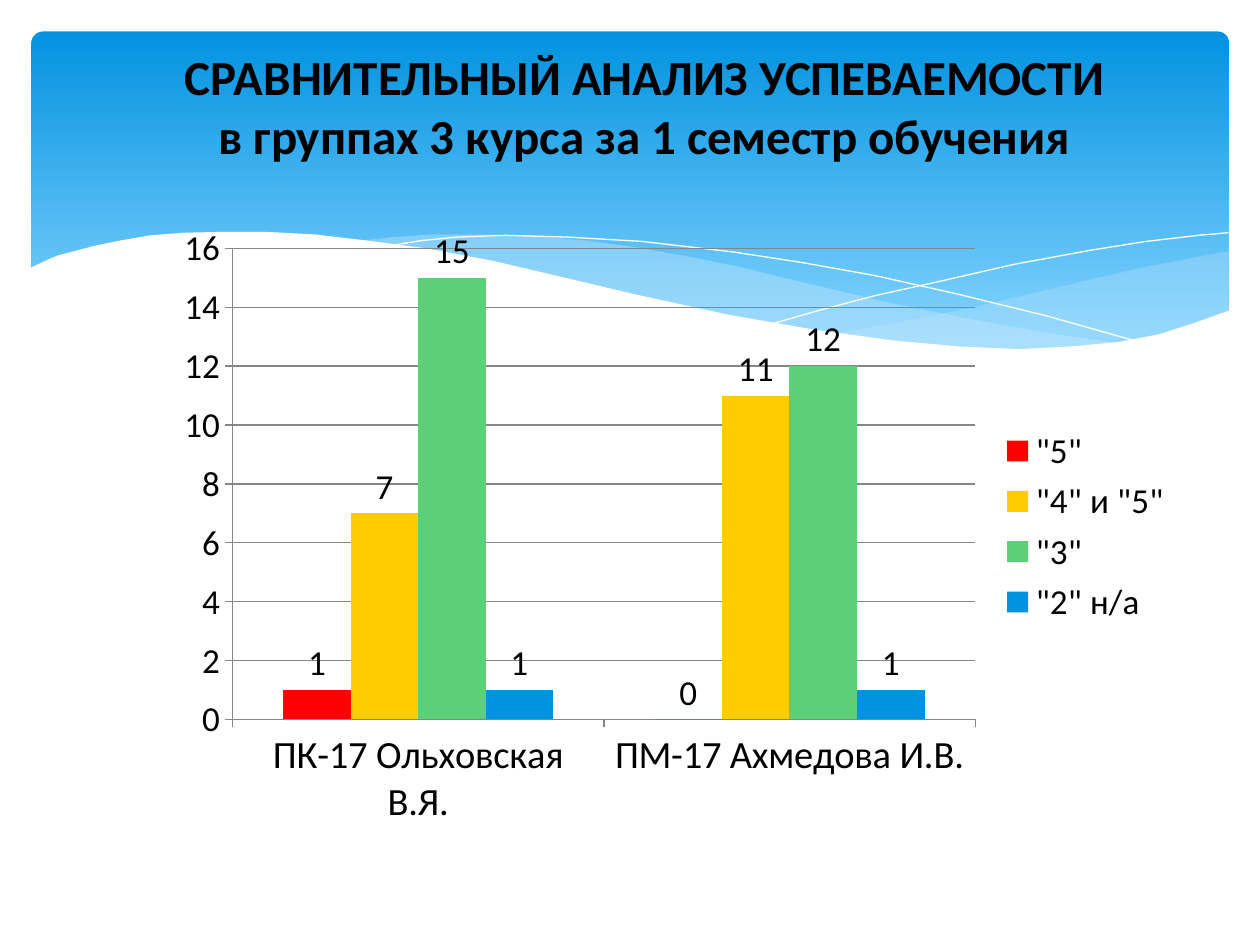
from pptx import Presentation
from pptx.chart.data import CategoryChartData
from pptx.dml.color import RGBColor
from pptx.enum.chart import (XL_CHART_TYPE as CT, XL_LABEL_POSITION as LabelPos,
                             XL_LEGEND_POSITION as LegendPos, XL_TICK_MARK as Tick)
from pptx.enum.shapes import MSO_SHAPE as Shape
from pptx.enum.text import MSO_ANCHOR as Anchor, PP_ALIGN as Align
from pptx.oxml.ns import qn
from pptx.util import Pt
from lxml.etree import SubElement

COLORS = {
    "top": "0293E0", "bottom": "83D3FE", "swell": "C6E7FC", "white": "FFFFFF",
    "text": "000000", "grid": "868686", "red": "FF0000", "yellow": "FFCC00",
    "green": "5BD078", "blue": "0293E0",
}
FONT = "Calibri"
TITLE = "СРАВНИТЕЛЬНЫЙ АНАЛИЗ УСПЕВАЕМОСТИ\vв группах 3 курса за 1 семестр обучения"
GROUPS = ["ПК-17 Ольховская В.Я.", "ПМ-17 Ахмедова И.В."]
GRADES = [
    ('"5"', (1, 0), "red"),
    ('"4" и "5"', (7, 11), "yellow"),
    ('"3"', (15, 12), "green"),
    ('"2" н/а', (1, 1), "blue"),
]

RIGHT_SWELL = [
    (702, 143.5), (652, 153), (620, 160.5), (561, 174.5), (525, 182), (476, 191),
    (508, 195.5), (536, 198), (562, 199.5), (594, 200), (622, 199), (652, 195),
    (678, 189), (702, 178),
]
MIDDLE_SWELL = [
    (643, 196.5), (603, 191), (558, 183), (508, 173), (453, 160), (420, 152),
    (390, 146), (361, 141), (335, 137.5), (302, 134.5), (273.5, 134), (248, 134),
    (225, 135.5), (206, 137.5), (233, 141), (261, 146), (291, 152), (323, 160),
    (382, 173), (433, 183.5), (468, 190), (500, 194.5), (530, 198), (557, 199.5),
    (581, 200), (603, 200), (624, 199),
]
FALLING_LINE = [
    (222.5, 140.5), (241, 137.5), (261, 135.5), (289, 134.5), (324, 135.5),
    (367, 138), (419, 144), (458, 150), (500, 157.5), (547, 168), (598, 180.5),
    (653, 196),
]
RISING_LINE = [
    (441.5, 185), (469.5, 177), (500, 169), (538.5, 160.5), (580, 151),
    (623.5, 143), (655, 138), (685, 134.5), (702, 133),
]
WHITE_WAVE = [
    (703.5, 177), (684, 184), (662.5, 191), (639, 195.5), (612, 198),
    (582.5, 199.5), (548, 198), (510, 194.5), (466, 188.5), (417, 180),
    (362, 168), (322, 158.5), (281.5, 149), (244, 142), (210, 137.5), (180, 134),
    (152, 132.5), (127.5, 132.5), (105, 133), (86, 134.5), (68.5, 137.5),
    (54, 140.5), (42.5, 143.5), (33, 146), (26, 149), (16.5, 153.5),
    (16.5, 237), (703.5, 237),
]
WAVES = [
    (RIGHT_SWELL, "swell", 29),
    (MIDDLE_SWELL, "swell", 40),
    (FALLING_LINE, None, None),
    (RISING_LINE, None, None),
    (WHITE_WAVE, "white", 100),
]


def rgb(name):
    return RGBColor.from_string(COLORS[name])


def apply(target, values):
    for name, value in values.items():
        setattr(target, name, value)


def style_font(font, size, bold=False):
    apply(font, {"name": FONT, "size": Pt(size), "bold": bold})
    font.color.rgb = rgb("text")


def style_line(line, color, width):
    line.color.rgb = rgb(color)
    line.width = Pt(width)


def add_banner(s):
    sp = s.shapes.add_shape(Shape.ROUNDED_RECTANGLE, Pt(18), Pt(18), Pt(684.5), Pt(194.5))
    sp.adjustments[0] = 0.034
    sp.shadow.inherit = False
    sp.line.fill.background()
    sp.fill.gradient()
    sp.fill.gradient_angle = 270
    for stop, color, position in zip(sp.fill.gradient_stops, ("top", "bottom"), (0, 0.9)):
        stop.color.rgb = rgb(color)
        stop.position = position


def add_wave(s, points, color, opacity):
    points = [(Pt(x), Pt(y)) for x, y in points]
    builder = s.shapes.build_freeform(*points[0])
    builder.add_line_segments(points[1:], close=color is not None)
    sp = builder.convert_to_shape()
    sp.shadow.inherit = False
    if color is None:
        sp.fill.background()
        style_line(sp.line, "white", 0)
        return
    sp.line.fill.background()
    sp.fill.solid()
    sp.fill.fore_color.rgb = rgb(color)
    if opacity < 100:
        clr = sp.element.spPr.find(qn("a:solidFill")).find(qn("a:srgbClr"))
        SubElement(clr, qn("a:alpha"), val=str(opacity * 1000))


def add_title(s):
    sp = s.shapes.title
    sp.element.getparent().append(sp.element)
    apply(sp, {"left": Pt(36.7), "top": Pt(26), "width": Pt(663), "height": Pt(98.6)})
    tf = sp.text_frame
    apply(tf, {"text": TITLE, "word_wrap": True, "vertical_anchor": Anchor.MIDDLE,
               "margin_top": 0, "margin_bottom": Pt(30)})
    p = tf.paragraphs[0]
    p.alignment = Align.CENTER
    for r in p.runs:
        style_font(r.font, 28, True)


def add_grades_chart(s):
    data = CategoryChartData(number_format="0")
    data.categories = GROUPS
    for name, values, _ in GRADES:
        data.add_series(name, values)
    chart = s.shapes.add_chart(CT.COLUMN_CLUSTERED, Pt(93.6), Pt(122.4),
                               Pt(584), Pt(357), data).chart
    apply(chart, {"has_title": False, "has_legend": True})
    style_font(chart.font, 20)
    apply(chart.legend, {"position": LegendPos.RIGHT, "include_in_layout": False})
    style_font(chart.legend.font, 20)

    for axis, size in ((chart.category_axis, 22), (chart.value_axis, 20)):
        apply(axis, {"major_tick_mark": Tick.OUTSIDE, "minor_tick_mark": Tick.NONE})
        style_font(axis.tick_labels.font, size)
        style_line(axis.format.line, "grid", 0.75)
    apply(chart.value_axis, {"minimum_scale": 0, "maximum_scale": 16, "major_unit": 2,
                             "has_major_gridlines": True})
    style_line(chart.value_axis.major_gridlines.format.line, "grid", 0.75)

    plot = chart.plots[0]
    apply(plot, {"gap_width": 150, "overlap": 0, "vary_by_categories": False})
    for series, (_, _, color) in zip(plot.series, GRADES):
        series.invert_if_negative = False
        series.format.fill.solid()
        series.format.fill.fore_color.rgb = rgb(color)
        labels = series.data_labels
        apply(labels, {"show_value": True, "position": LabelPos.OUTSIDE_END,
                       "number_format": "0", "number_format_is_linked": False})
        style_font(labels.font, 20)


def main():
    prs = Presentation()
    apply(prs, {"slide_width": Pt(720), "slide_height": Pt(540)})
    s = prs.slides.add_slide(prs.slide_layouts[5])
    add_banner(s)
    for wave in WAVES:
        add_wave(s, *wave)
    add_title(s)
    add_grades_chart(s)
    prs.save("out.pptx")


if __name__ == "__main__":
    main()
